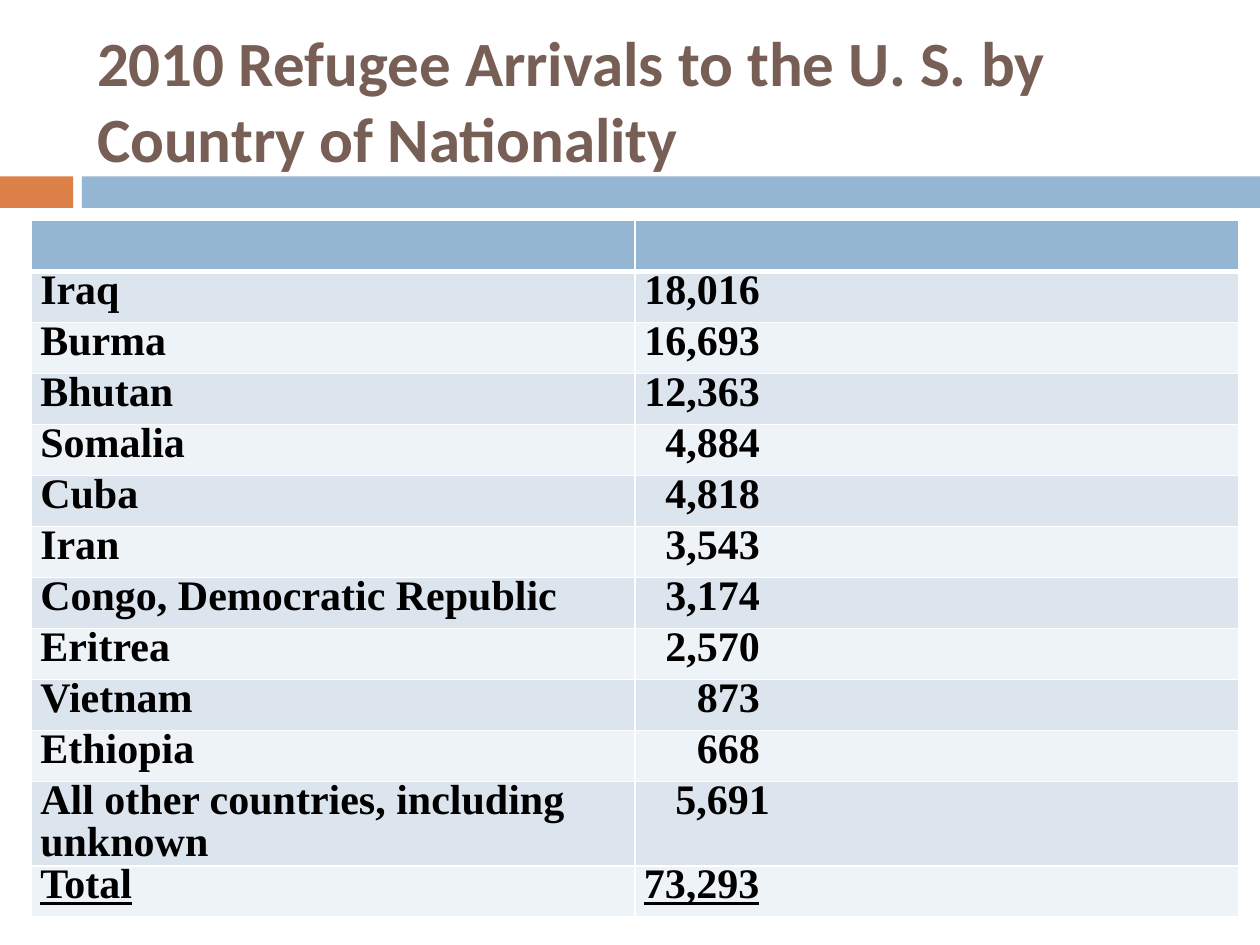
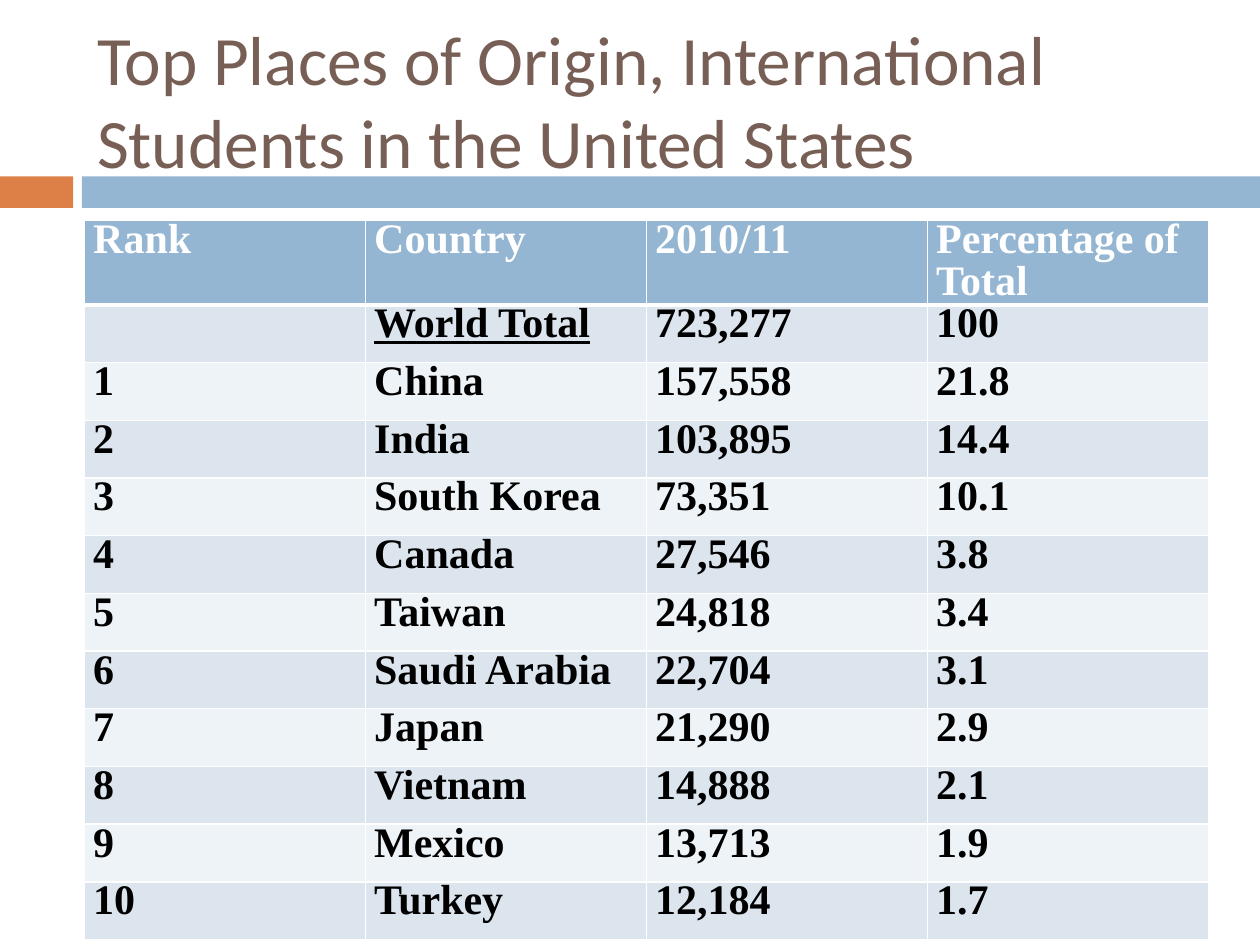
import pptx
import pptx.dml.color
import pptx.enum.shapes
import pptx.enum.text
import pptx.oxml
import pptx.oxml.ns
import pptx.util
from lxml import etree

Inches = pptx.util.Inches
Pt = pptx.util.Pt
Align = pptx.enum.text.PP_ALIGN
Anchor = pptx.enum.text.MSO_ANCHOR

ORANGE, BLUE, BROWN = "DD8047", "94B6D2", "775F55"
WHITE, BLACK = "FFFFFF", "000000"
STRIPES = ("DCE5EE", "EEF3F7")
BANDS = [(ORANGE, 0, 0.58), (BLUE, 0.65, 9.35)]
BAND_TOP, BAND_HEIGHT = 1.4, 0.25
TITLE_PLACE = {"left": 0.67, "top": 0.25, "width": 8.92, "height": 1.08}
TABLE_TOP = 1.75
TWO_LINE_ROW = 0.67
SIDE_MARGIN = 0.07
NUMBER_MARGIN = 3.8
WIDE_NUMBER_MARGIN = 3.72
TOTAL_TAB = 1.58

REFUGEES = [
    ("", ""),
    ("Iraq", "18,016"),
    ("Burma", "16,693"),
    ("Bhutan", "12,363"),
    ("Somalia", "4,884"),
    ("Cuba", "4,818"),
    ("Iran", "3,543"),
    ("Congo, Democratic Republic", "3,174"),
    ("Eritrea", "2,570"),
    ("Vietnam", "873"),
    ("Ethiopia", "668"),
    ("All other countries, including unknown", "5,691"),
    ("Total", "73,293\t"),
]
STUDENTS = [
    ("Rank", "Country", "2010/11", "Percentage of Total"),
    ("", "World Total", "723,277", "100"),
    ("1", "China", "157,558", "21.8"),
    ("2", "India", "103,895", "14.4"),
    ("3", "South Korea", "73,351", "10.1"),
    ("4", "Canada", "27,546", "3.8"),
    ("5", "Taiwan", "24,818", "3.4"),
    ("6", "Saudi Arabia", "22,704", "3.1"),
    ("7", "Japan", "21,290", "2.9"),
    ("8", "Vietnam", "14,888", "2.1"),
    ("9", "Mexico", "13,713", "1.9"),
    ("10", "Turkey", "12,184", "1.7"),
]
UNDERLINED = {"Total", "73,293\t", "World Total"}


def rgb(value):
    return pptx.dml.color.RGBColor.from_string(value)


def apply(target, values):
    for name, value in values.items():
        setattr(target, name, value)


def style_font(font, colour, **values):
    apply(font, values)
    font.color.rgb = rgb(colour)


def add_page(deck, text, size, bold):
    page = deck.slides.add_slide(deck.slide_layouts[5])
    title = page.shapes.title
    apply(title, {name: Inches(value) for name, value in TITLE_PLACE.items()})
    title.text_frame.text = text
    apply(title.text_frame, {"word_wrap": True, "vertical_anchor": Anchor.MIDDLE,
                             "auto_size": pptx.enum.text.MSO_AUTO_SIZE.NONE})
    para = title.text_frame.paragraphs[0]
    para.alignment = Align.LEFT
    style_font(para.runs[0].font, BROWN, name="Calibri", size=Pt(size), bold=bold)
    for colour, left, width in BANDS:
        band = page.shapes.add_shape(
            pptx.enum.shapes.MSO_SHAPE.RECTANGLE, Inches(left), Inches(BAND_TOP),
            Inches(width), Inches(BAND_HEIGHT))
        band.shadow.inherit = False
        band.fill.solid()
        band.fill.fore_color.rgb = rgb(colour)
        band.line.fill.background()
        title.element.addprevious(band.element)
    return page


def add_borders(cell, row):
    properties = cell._tc.get_or_add_tcPr()
    widths = {"L": 1, "R": 1, "T": 3 if row == 1 else 1, "B": 3 if row == 0 else 1}
    for side, width in widths.items():
        line = etree.SubElement(properties, pptx.oxml.ns.qn(f"a:ln{side}"), w=str(Pt(width)))
        fill = etree.SubElement(line, pptx.oxml.ns.qn("a:solidFill"))
        etree.SubElement(fill, pptx.oxml.ns.qn("a:srgbClr"), val=WHITE)


def fill_cell(cell, text, row):
    apply(cell, {"margin_left": Inches(SIDE_MARGIN), "margin_right": Inches(SIDE_MARGIN),
                 "margin_top": 0, "margin_bottom": 0})
    add_borders(cell, row)
    cell.fill.solid()
    cell.fill.fore_color.rgb = rgb(STRIPES[(row - 1) % 2] if row else BLUE)
    para = cell.text_frame.paragraphs[0]
    para.line_spacing = Pt(24)
    if text:
        span = para.add_run()
        span.text = text
        style_font(span.font, BLACK if row else WHITE, name="Times New Roman",
                   size=Pt(24), bold=True, underline=text in UNDERLINED)


def add_data_table(page, rows, left, width, height):
    columns = len(rows[0])
    table = page.shapes.add_table(len(rows), columns, Inches(left), Inches(TABLE_TOP),
                                  Inches(width), Inches(height)).table
    row_height = Inches((height - TWO_LINE_ROW) / (len(rows) - 1))
    for row, texts in enumerate(rows):
        wraps = max(map(len, texts)) > 26 or len(texts[-1]) > 15
        table.rows[row].height = Inches(TWO_LINE_ROW) if wraps else row_height
        for column, text in enumerate(texts):
            fill_cell(table.cell(row, column), text, row)
    return table


def align_arrivals(table):
    last = len(REFUGEES) - 1
    for row in range(1, last):
        cell = table.cell(row, 1)
        margin = WIDE_NUMBER_MARGIN if row == last - 1 else NUMBER_MARGIN
        apply(cell, {"margin_left": 0, "margin_right": Inches(margin)})
        cell.text_frame.paragraphs[0].alignment = Align.RIGHT
    properties = table.cell(last, 1).text_frame.paragraphs[0]._p.get_or_add_pPr()
    tabs = etree.SubElement(properties, pptx.oxml.ns.qn("a:tabLst"))
    etree.SubElement(tabs, pptx.oxml.ns.qn("a:tab"), pos=str(Inches(TOTAL_TAB)), algn="l")


def main():
    deck = pptx.Presentation()
    apply(deck, {"slide_width": Inches(10), "slide_height": Inches(7.5)})
    page = add_page(deck, "2010 Refugee Arrivals to the U. S. by Country of Nationality", 36, True)
    align_arrivals(add_data_table(page, REFUGEES, 0.25, 9.58, 5.53))
    page = add_page(deck, "Top Places of Origin, International Students in the United States",
                    39.6, False)
    add_data_table(page, STUDENTS, 0.67, 8.92, 5.71)
    deck.save("out.pptx")


if __name__ == "__main__":
    main()
